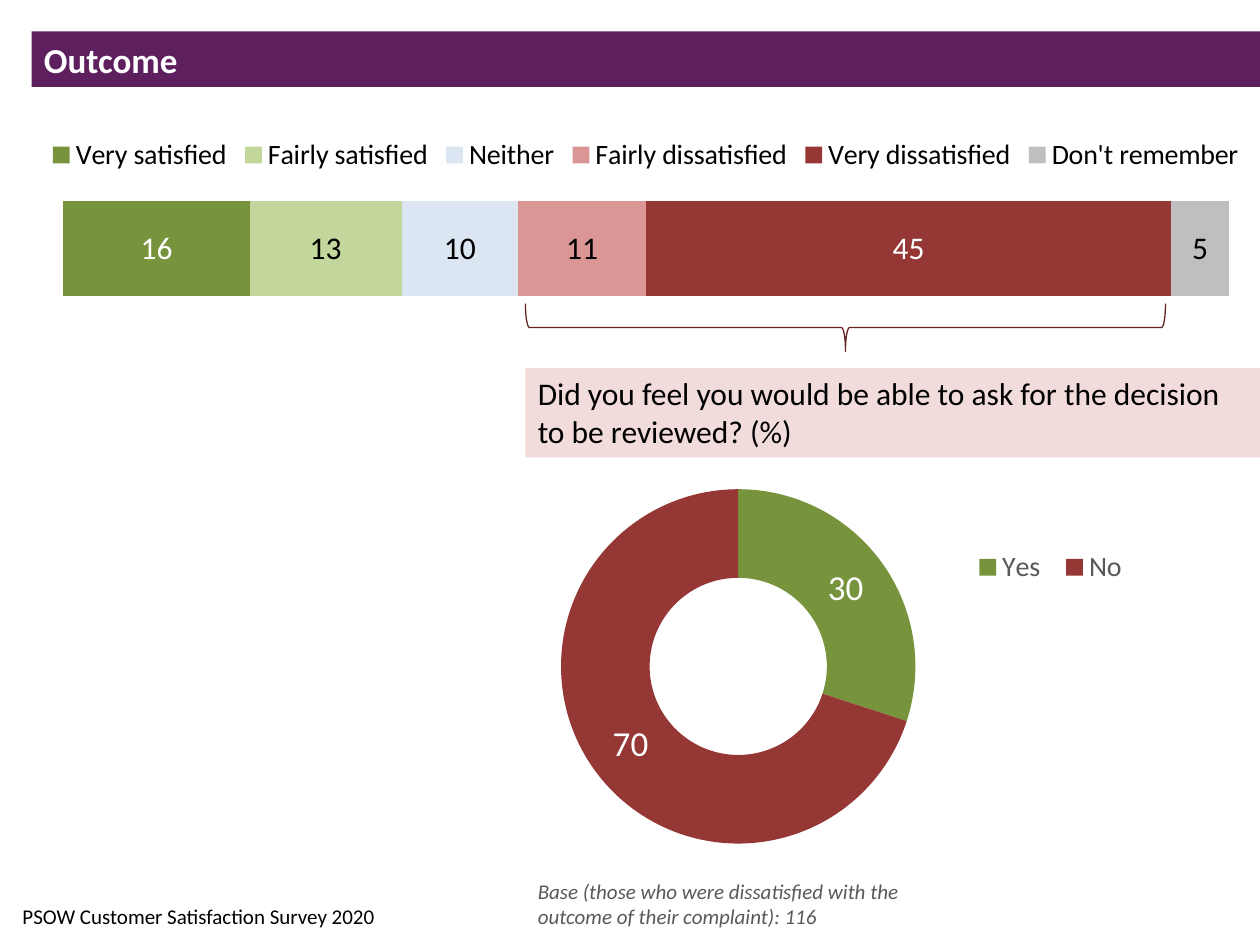
from lxml.etree import SubElement
from pptx import Presentation
from pptx.chart.data import CategoryChartData
from pptx.dml.color import RGBColor
from pptx.enum.chart import XL_CHART_TYPE, XL_LEGEND_POSITION
from pptx.enum.shapes import MSO_SHAPE
from pptx.enum.text import MSO_ANCHOR, PP_ALIGN
from pptx.oxml import parse_xml
from pptx.oxml.ns import nsdecls, qn
from pptx.util import Inches, Pt

FONT = "Calibri"
WHITE = RGBColor(0xFF, 0xFF, 0xFF)
BLACK = RGBColor(0, 0, 0)
GREY = RGBColor(0x59, 0x59, 0x59)
PURPLE = RGBColor(0x5D, 0x1F, 0x5E)
PINK = RGBColor(0xF2, 0xDC, 0xDB)
MAROON = RGBColor(0x63, 0x25, 0x23)
GREEN = RGBColor(0x77, 0x93, 0x3C)
LIGHT_GREEN = RGBColor(0xC3, 0xD6, 0x9B)
PALE_BLUE = RGBColor(0xDC, 0xE6, 0xF2)
LIGHT_RED = RGBColor(0xD9, 0x96, 0x94)
RED = RGBColor(0x95, 0x37, 0x35)
SILVER = RGBColor(0xBF, 0xBF, 0xBF)

# Content
TITLE = "Outcome"
QUESTION = "Did you feel you would be able to ask for the decision to be reviewed? (%)"
BASE = "Base (those who were dissatisfied with the outcome of their complaint): 116"
FOOTER = "PSOW Customer Satisfaction Survey 2020"
SATISFACTION = [  # name, value, fill, label colour
    ("Very satisfied", 16, GREEN, WHITE),
    ("Fairly satisfied", 13, LIGHT_GREEN, BLACK),
    ("Neither", 10, PALE_BLUE, BLACK),
    ("Fairly dissatisfied", 11, LIGHT_RED, BLACK),
    ("Very dissatisfied", 45, RED, WHITE),
    ("Don't remember", 5, SILVER, BLACK),
]
REVIEW = [("Yes", 30, GREEN), ("No", 70, RED)]

deck = Presentation()
deck.slide_width, deck.slide_height = Inches(10), Inches(7.5)
page = deck.slides.add_slide(deck.slide_layouts[6])


def set_font(font, size, color, bold=False, italic=False):
    font.name, font.size, font.bold, font.italic = FONT, Pt(size), bold, italic
    font.color.rgb = color


def add_text(text, *place, size=12, color=BLACK, fill=None, anchor=MSO_ANCHOR.TOP,
             bold=False, italic=False):
    place = [Inches(value) for value in place]
    if fill is None:
        box = page.shapes.add_textbox(*place)
    else:
        box = page.shapes.add_shape(MSO_SHAPE.RECTANGLE, *place)
        box.shadow.inherit = False
        box.fill.solid()
        box.fill.fore_color.rgb = fill
        box.line.fill.background()
    frame = box.text_frame
    frame.word_wrap = True
    frame.vertical_anchor = anchor
    para = frame.paragraphs[0]
    para.alignment = PP_ALIGN.LEFT
    span = para.add_run()
    span.text = text
    set_font(span.font, size, color, bold, italic)


def set_layout(parent, before, bounds, inner=False):
    """Place a plot area or legend by fractions of its chart."""
    for old in parent.findall(qn("c:layout")):
        parent.remove(old)
    layout = parse_xml(f"<c:layout {nsdecls('c')}/>")
    manual = SubElement(layout, qn("c:manualLayout"))
    settings = [("layoutTarget", "inner")] if inner else []
    settings += [("xMode", "edge"), ("yMode", "edge")]
    settings += zip("xywh", bounds)
    for tag, value in settings:
        SubElement(manual, qn(f"c:{tag}")).set("val", str(value))
    if before is None:
        parent.insert(0, layout)
    else:
        before.addnext(layout)


def add_chart(kind, data, *place, size, plot, legend, legend_color, position):
    chart = page.shapes.add_chart(kind, *[Inches(v) for v in place], data).chart
    chart.has_title = False
    set_font(chart.font, size, BLACK)
    chart.has_legend = True
    chart.legend.position = position
    chart.legend.include_in_layout = False
    set_font(chart.legend.font, 16, legend_color)
    root = chart.element.find(qn("c:chart"))
    set_layout(root.find(qn("c:plotArea")), None, plot, inner=True)
    key = root.find(qn("c:legend"))
    set_layout(key, key.find(qn("c:legendPos")), legend)
    # Clear chart background
    root.addnext(parse_xml(
        f"<c:spPr {nsdecls('c', 'a')}><a:noFill/><a:ln><a:noFill/></a:ln></c:spPr>"))
    return chart


def paint(part, color):
    part.format.fill.solid()
    part.format.fill.fore_color.rgb = color


def show_values(labels, size, color):
    labels.show_value = True
    set_font(labels.font, size, color)


# Text
add_text(FOOTER, 0.08, 6.92, 5.25, 0.5, anchor=MSO_ANCHOR.BOTTOM)
add_text(TITLE, 0.25, 0.25, 9.75, 0.44, size=20, color=WHITE, fill=PURPLE, bold=True,
         anchor=MSO_ANCHOR.MIDDLE)
add_text(QUESTION, 4.17, 2.92, 5.83, 0.71, size=18, fill=PINK)
add_text(BASE, 4.17, 6.92, 3.67, 0.5, color=GREY, italic=True)

# Satisfaction bar
data = CategoryChartData()
data.categories = ["1"]
for name, value, _, _ in SATISFACTION:
    data.add_series(name, [value])
bar = add_chart(XL_CHART_TYPE.BAR_STACKED_100, data, 0.25, 0.7, 9.75, 3.32, size=18,
                plot=(0.026, 0.184, 0.949, 0.398), legend=(0.01, 0.1, 0.98, 0.12),
                legend_color=BLACK, position=XL_LEGEND_POSITION.RIGHT)
bar.category_axis.reverse_order = True
for axis in (bar.category_axis, bar.value_axis):
    axis.has_major_gridlines = False
    axis.visible = False
bar.plots[0].gap_width, bar.plots[0].overlap = 75, 100
for series, (_, _, fill, label) in zip(bar.plots[0].series, SATISFACTION):
    paint(series, fill)
    show_values(series.data_labels, 18, label)

# Brace under the dissatisfied segments
brace = page.shapes.add_shape(MSO_SHAPE.RIGHT_BRACE, Inches(6.52), Inches(0.06),
                              Inches(0.38), Inches(5.08))
brace.rotation = 90
brace.shadow.inherit = False
brace.fill.background()
brace.line.color.rgb = MAROON
brace.line.width = Pt(0.75)

# Review doughnut
data = CategoryChartData()
data.categories = [name for name, _, _ in REVIEW]
data.add_series("Series 1", [value for _, value, _ in REVIEW])
ring = add_chart(XL_CHART_TYPE.DOUGHNUT, data, 3.59, 3.62, 6.33, 3.46, size=10,
                 plot=(0.09, 0.076, 0.537, 0.813), legend=(0.64, 0.2, 0.22, 0.11),
                 legend_color=GREY, position=XL_LEGEND_POSITION.TOP)
ring.plots[0].vary_by_categories = True
series = ring.plots[0].series[0]
for index, (_, _, fill) in enumerate(REVIEW):
    paint(series.points[index], fill)
show_values(series.data_labels, 20, WHITE)

deck.save("out.pptx")
